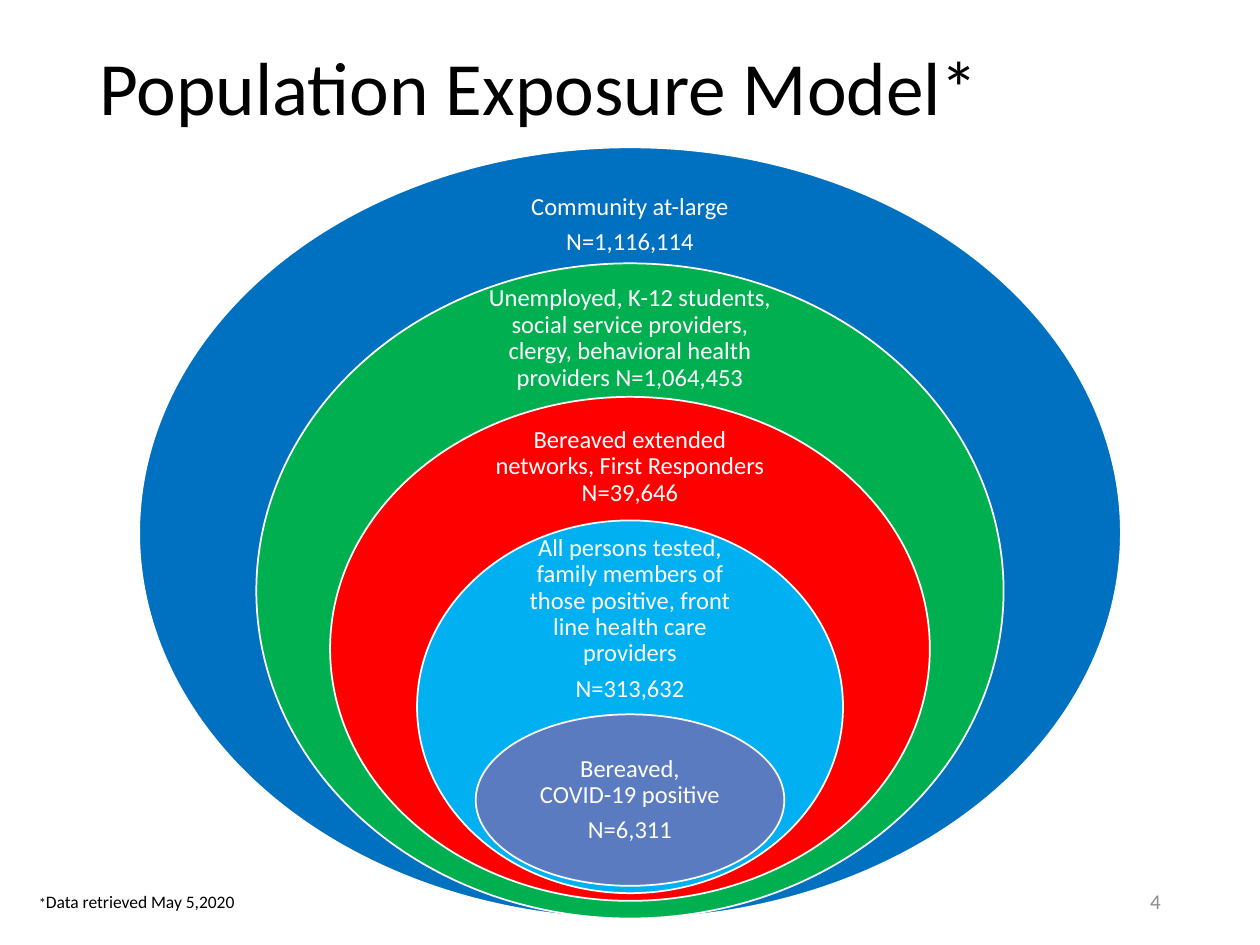
import dataclasses

import pptx
import pptx.dml.color
import pptx.enum.shapes
import pptx.enum.text
import pptx.util

Pt = pptx.util.Pt
RGB = pptx.dml.color.RGBColor
Align = pptx.enum.text.PP_ALIGN
Anchor = pptx.enum.text.MSO_ANCHOR

FONT = "Calibri"
WHITE = RGB(0xFF, 0xFF, 0xFF)
BLACK = RGB(0x00, 0x00, 0x00)
GRAY = RGB(0x8C, 0x8C, 0x8C)
BLUE = RGB(0x00, 0x70, 0xC0)
GREEN = RGB(0x00, 0xB0, 0x50)
RED = RGB(0xFF, 0x00, 0x00)
SKY = RGB(0x00, 0xB0, 0xF0)
SLATE = RGB(0x5B, 0x7B, 0xC0)

MID = 360  # centre line shared by all rings and labels


@dataclasses.dataclass
class Box:
    left: float
    top: float
    width: float
    height: float

    def place(self) -> tuple:
        return Pt(self.left), Pt(self.top), Pt(self.width), Pt(self.height)


def centred(top: float, width: float, height: float) -> Box:
    return Box(MID - width / 2, top, width, height)


@dataclasses.dataclass
class Ring:
    """One nested group: its ellipse, its label box and its lines of text."""
    fill: RGB
    oval: Box
    label: Box
    lines: list[str]
    inset: float = 8


RINGS = [
    Ring(BLUE, centred(84.2, 561, 440.6), centred(106.6, 210, 44),
         ["Community at-large", "N=1,116,114"]),
    Ring(GREEN, centred(150.5, 427, 374.4), centred(172, 184.3, 43.2),
         ["Unemployed, K-12 students, social service providers, clergy, "
          "behavioral health providers N=1,064,453"]),
    Ring(RED, centred(226.8, 342.7, 288), centred(247, 177.8, 39.6),
         ["Bereaved extended networks, First Responders N=39,646"]),
    Ring(SKY, centred(297.4, 243.4, 213), centred(303.5, 131, 100),
         ["All persons tested, family members of those positive, "
          "front line health care providers", "N=313,632"], inset=6.5),
    Ring(SLATE, centred(408.2, 176.4, 98), centred(432.7, 124.6, 49),
         ["Bereaved, COVID-19 positive", "N=6,311"]),
]


def add_text(slide, box: Box, lines: list, *, size: float, color: RGB,
             align=Align.LEFT, anchor=Anchor.MIDDLE, inset: float | None = None,
             pitch: float | None = None, gap: float = 0) -> None:
    """Each line is a string or a list of (text, size) runs."""
    frame = slide.shapes.add_textbox(*box.place()).text_frame
    frame.word_wrap = True
    frame.vertical_anchor = anchor
    if inset is not None:
        frame.margin_left = frame.margin_right = Pt(inset)
        frame.margin_top = frame.margin_bottom = Pt(inset)
    for i, line in enumerate(lines):
        para = frame.add_paragraph() if i else frame.paragraphs[0]
        para.alignment = align
        para.line_spacing = pitch
        para.space_after = Pt(gap)
        runs = [(line, size)] if isinstance(line, str) else line
        for text, points in runs:
            run = para.add_run()
            run.text = text
            run.font.name = FONT
            run.font.size = Pt(points)
            run.font.color.rgb = color


def add_ring(slide, ring: Ring) -> None:
    oval = slide.shapes.add_shape(
        pptx.enum.shapes.MSO_SHAPE.OVAL, *ring.oval.place())
    oval.shadow.inherit = False
    oval.fill.solid()
    oval.fill.fore_color.rgb = ring.fill
    oval.line.color.rgb = WHITE
    oval.line.width = Pt(1)
    add_text(slide, ring.label, ring.lines, size=14, color=WHITE,
             align=Align.CENTER, inset=ring.inset, pitch=0.9, gap=4.9)


def main() -> None:
    deck = pptx.Presentation()
    deck.slide_width, deck.slide_height = Pt(720), Pt(540)
    slide = deck.slides.add_slide(deck.slide_layouts[6])
    for ring in RINGS:
        add_ring(slide, ring)
    add_text(slide, Box(49.7, 0, 620.6, 104.4), ["Population Exposure Model*"],
             size=43, color=BLACK, pitch=0.9)
    add_text(slide, Box(15.1, 505.4, 167.8, 19.4),
             [[("*", 8.2), ("Data retrieved May 5,2020", 10)]],
             size=10, color=BLACK, anchor=Anchor.TOP)
    add_text(slide, Box(508.3, 500.4, 162, 28.8), ["4"],
             size=12, color=GRAY, align=Align.RIGHT)
    deck.save("out.pptx")


if __name__ == "__main__":
    main()
